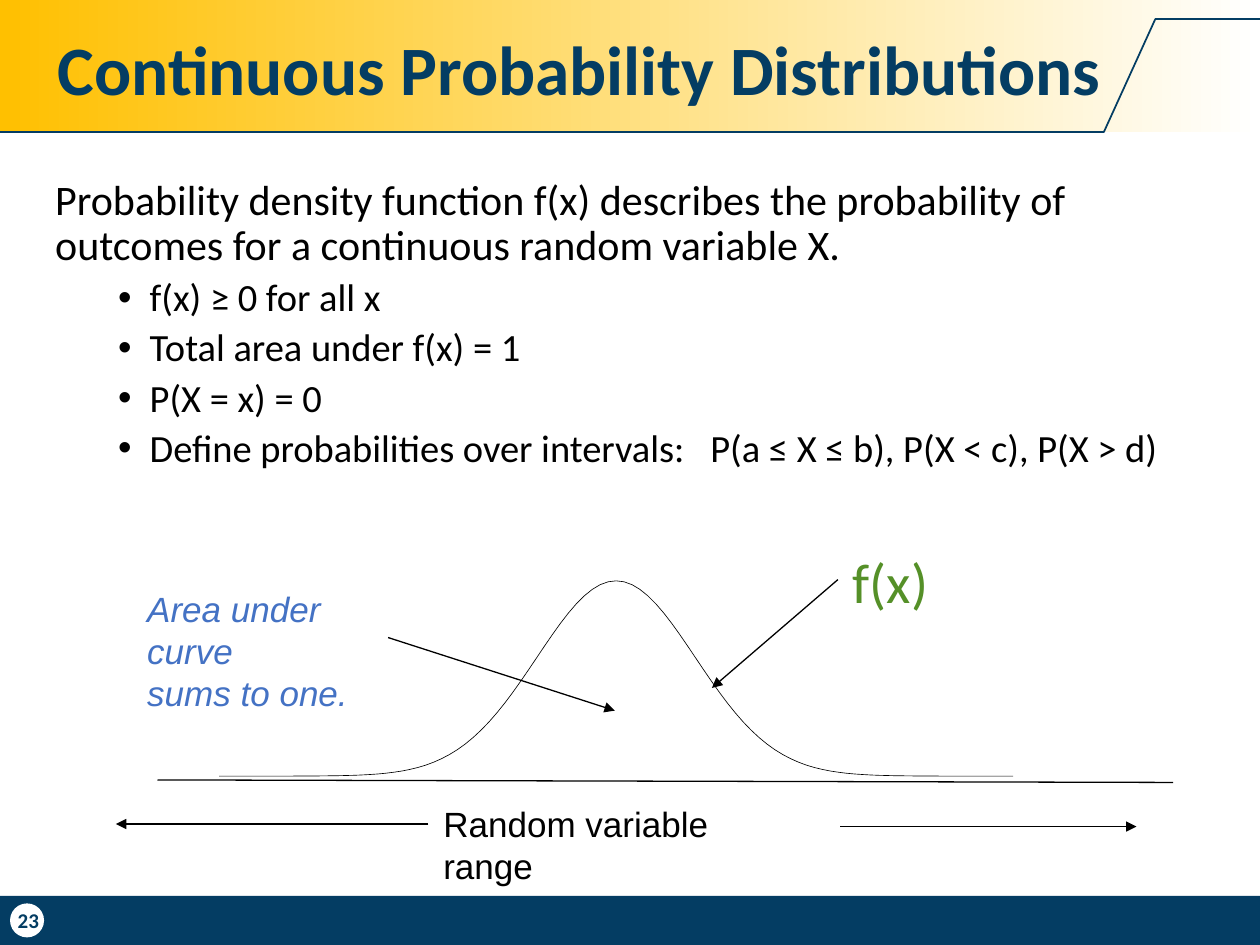
from math import exp

from lxml.etree import SubElement
from pptx import Presentation
from pptx.dml.color import RGBColor
from pptx.enum.shapes import MSO_CONNECTOR, MSO_SHAPE
from pptx.enum.text import MSO_ANCHOR, PP_ALIGN
from pptx.oxml.ns import qn
from pptx.util import Inches, Pt

NAVY, BLACK, WHITE = "043D63", "000000", "FFFFFF"


def rgb(value):
    return RGBColor.from_string(value)


class SlideBuilder:
    """Hold the style and the current slide, and draw each kind of element."""

    font = "Calibri"

    def __init__(self, prs):
        self.s = prs.slides.add_slide(prs.slide_layouts[6])

    def shape(self, kind, box, color):
        sp = self.s.shapes.add_shape(kind, *map(Inches, box))
        sp.shadow.inherit = False
        sp.line.fill.background()
        sp.fill.solid()
        sp.fill.fore_color.rgb = rgb(color)
        return sp

    def banner(self, box, start, end):
        sp = self.shape(MSO_SHAPE.RECTANGLE, box, end)
        sp.rotation = 180
        sp.fill.gradient()
        sp.fill.gradient_angle = 180
        for stop, position, color in zip(sp.fill.gradient_stops, (0, 1), (start, end)):
            stop.position = position
            stop.color.rgb = rgb(color)

    def line(self, start, end, color=BLACK, width=0.75, arrow=False):
        points = map(Inches, (*start, *end))
        sp = self.s.shapes.add_connector(MSO_CONNECTOR.STRAIGHT, *points)
        sp.line.color.rgb = rgb(color)
        sp.line.width = Pt(width)
        if arrow:
            SubElement(sp.line._get_or_add_ln(), qn("a:tailEnd"), type="triangle")
        SubElement(sp._element.spPr, qn("a:effectLst"))

    def curve(self, points, width):
        points = [(Inches(x), Inches(y)) for x, y in points]
        builder = self.s.shapes.build_freeform(*points[0])
        builder.add_line_segments(points[1:], close=False)
        sp = builder.convert_to_shape()
        sp.shadow.inherit = False
        sp.fill.background()
        sp.line.color.rgb = rgb(BLACK)
        sp.line.width = Pt(width)

    def text_box(self, box, anchor=MSO_ANCHOR.TOP, right=0.1):
        tf = self.s.shapes.add_textbox(*map(Inches, box)).text_frame
        tf.word_wrap = True
        tf.vertical_anchor = anchor
        tf.margin_right = Inches(right)
        return tf

    def paragraph(self, tf, text, size, color=BLACK, layout=None, bullet=False,
                  tab=None, **font):
        p = tf.paragraphs[0]
        if p.runs:
            p = tf.add_paragraph()
        pPr = p._p.get_or_add_pPr()
        if bullet:
            pPr.set("marL", str(Inches(0.75)))
            pPr.set("indent", str(Inches(-0.25)))
            SubElement(pPr, qn("a:buFont"), typeface="Arial")
            SubElement(pPr, qn("a:buChar"), char="•")
        if tab:
            tabs = SubElement(pPr, qn("a:tabLst"))
            SubElement(tabs, qn("a:tab"), pos=str(Inches(tab)), algn="l")
        for name, value in (layout or {}).items():
            setattr(p, name, value)
        r = p.add_run()
        r.text = text
        for name, value in {"name": self.font, "size": Pt(size), **font}.items():
            setattr(r.font, name, value)
        r.font.color.rgb = rgb(color)


def main():
    prs = Presentation()
    prs.slide_width, prs.slide_height = Inches(10), Inches(7.5)
    b = SlideBuilder(prs)

    b.shape(MSO_SHAPE.RECTANGLE, (0, 7.11, 10, 0.39), NAVY)
    b.banner((0, 0, 10, 1.05), "FFC000", WHITE)
    edge = [(0, 1.05), (8.76, 1.05), (9.17, 0.15), (10, 0.15)]
    for start, end in zip(edge, edge[1:]):
        b.line(start, end, NAVY, 1)
    b.shape(MSO_SHAPE.OVAL, (0.08, 7.17, 0.27, 0.27), WHITE)

    title = b.text_box((0.36, 0.11, 8.96, 0.94), MSO_ANCHOR.MIDDLE)
    b.paragraph(title, "Continuous Probability Distributions", 39.6, NAVY,
                {"line_spacing": 0.9}, bold=True)

    body = b.text_box((0.34, 1.37, 9.33, 5.39))
    b.paragraph(body, "Probability density function f(x) describes the probability of "
                "outcomes for a continuous random variable X.", 24,
                layout={"line_spacing": 0.9})
    bullet_layout = {"level": 1, "line_spacing": 0.9, "space_before": Pt(5)}
    for text, tab in [
        ("f(x) ≥ 0 for all x", None),
        ("Total area under f(x) = 1", None),
        ("P(X = x) = 0", None),
        ("Define probabilities over intervals:\tP(a ≤ X ≤ b), P(X < c), P(X > d)", 5.2),
    ]:
        b.paragraph(body, text, 22, layout=bullet_layout, bullet=True, tab=tab)

    number = b.text_box((-0.01, 7.09, 0.47, 0.43), MSO_ANCHOR.MIDDLE)
    b.paragraph(number, "23", 12, NAVY, {"alignment": PP_ALIGN.CENTER}, bold=True)

    left, base, height, sigma, steps = 1.74, 6.16, 1.55, 0.63, 100
    scores = [10 * i / steps - 5 for i in range(steps + 1)]
    b.curve([(left + (z + 5) * sigma, base - height * exp(-z * z / 2))
             for z in scores], 0.38)
    b.line((1.25, 6.19), (9.31, 6.21))

    b.paragraph(b.text_box((6.67, 4.3, 0.81, 0.64), right=0), "f(x)", 32, "559028")
    area = b.text_box((1.07, 4.61, 2.33, 0.77), right=0.3)
    for text in ("Area under curve", "sums to one."):
        b.paragraph(area, text, 20, "4472C4", name="Arial", italic=True)
    span = b.text_box((3.42, 6.32, 3.09, 0.43), right=0.3)
    b.paragraph(span, "Random variable range", 20, name="Arial")

    for start, end in [
        ((6.65, 4.6), (5.65, 5.46)),
        ((3.08, 5.06), (4.88, 5.64)),
        ((3.4, 6.54), (0.92, 6.54)),
        ((6.67, 6.56), (9.02, 6.56)),
    ]:
        b.line(start, end, arrow=True)

    prs.save("out.pptx")


if __name__ == "__main__":
    main()
